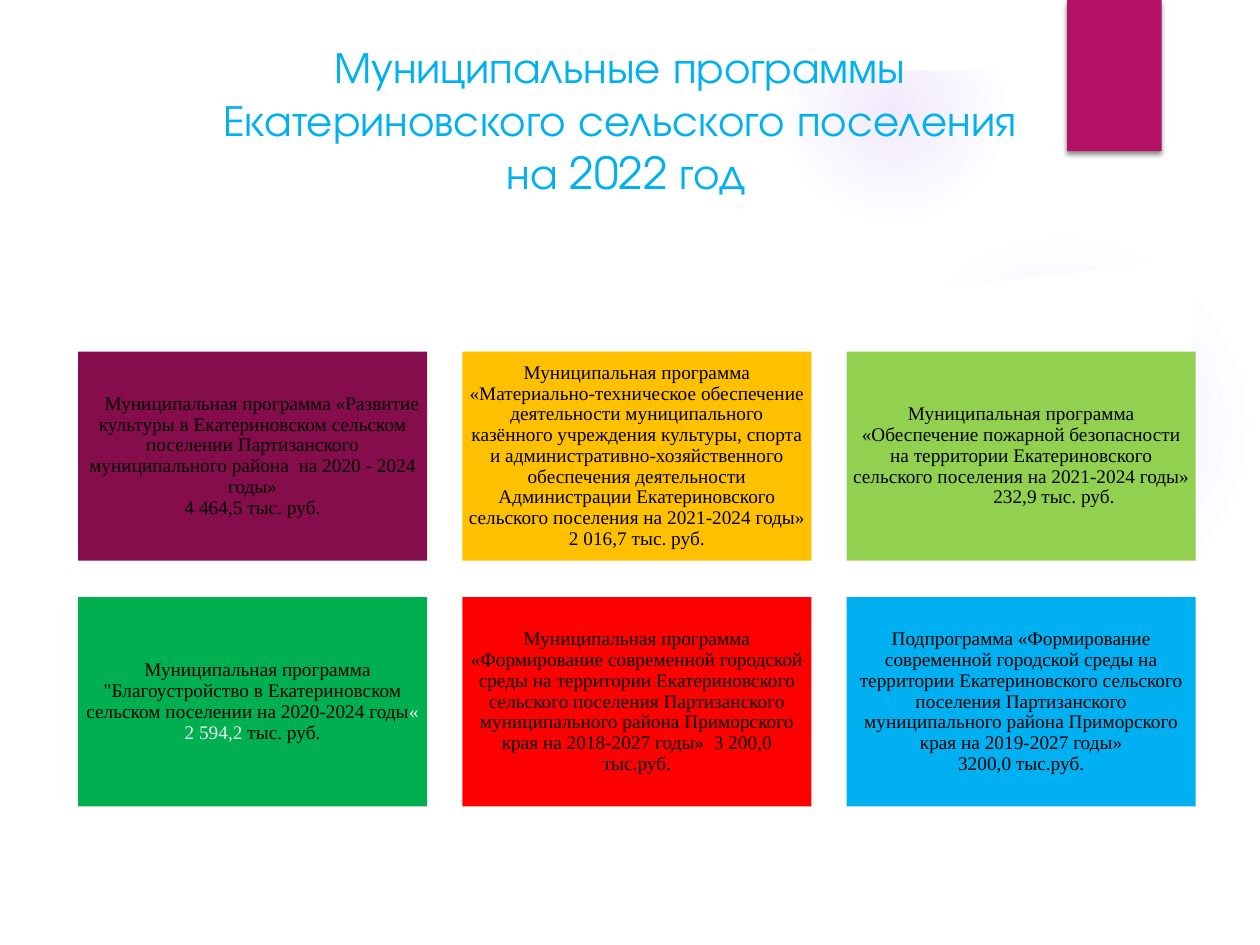
from lxml import etree
from pptx import Presentation
from pptx.dml.color import RGBColor
from pptx.enum import shapes as sh, text as tx
from pptx.oxml import ns
from pptx.util import Inches, Pt

# Content
TITLE = ("Муниципальные программы \vЕкатериновского сельского поселения \v"
         "на 2022 год")
DARK, PALE = "000000", "EBEBEB"
# Each card: fill, first-line indent, sum indent, paragraphs of (text, colour) runs
CARDS = [
    ("860D4C", 0.15, 0, [
        [("Муниципальная программа «Развитие культуры в Екатериновском сельском "
          "поселении Партизанского муниципального района  на 2020 - 2024 годы»", DARK)],
        [("4 464,5 тыс. руб.", DARK)]]),
    ("FFC000", 0, 0, [
        [("Муниципальная программа «Материально-техническое обеспечение деятельности "
          "муниципального казённого учреждения культуры, спорта и "
          "административно-хозяйственного обеспечения деятельности Администрации "
          "Екатериновского сельского поселения на 2021-2024 годы»", DARK)],
        [("2 016,7 тыс. руб.", DARK)]]),
    ("92D050", 0, 0.52, [
        [("Муниципальная программа «Обеспечение пожарной безопасности на территории "
          "Екатериновского сельского поселения на 2021-2024 годы»", DARK)],
        [("232,9 тыс. руб.", DARK)]]),
    ("00B050", 0.08, 0, [
        [("Муниципальная программа \"Благоустройство в Екатериновском сельском "
          "поселении на 2020-2024 годы", DARK), ("«", PALE)],
        [("2 594,2", PALE), (" тыс. руб.", DARK)]]),
    ("FF0000", 0, 0, [
        [("Муниципальная программа «Формирование современной городской среды на "
          "территории Екатериновского сельского поселения Партизанского муниципального "
          "района Приморского края на 2018-2027 годы»  3 200,0 тыс.руб.", DARK)]]),
    ("00B0F0", 0, 0, [
        [("Подпрограмма «Формирование современной городской среды на территории "
          "Екатериновского сельского поселения Партизанского муниципального района "
          "Приморского края на 2019-2027 годы»", DARK)],
        [("3200,0 тыс.руб.", DARK)]]),
]
# Glows: left, top, size, stops of (position %, opacity %)
GLOWS = [(6.89, 1.83, 3.08, [(0, 7), (36, 6), (69, 0)]),
         (6.22, 0, 1.75, [(0, 14), (36, 7), (73, 0)])]
# Wavy top edge of the white panel, in hundredths of an inch
EDGE = [(947, 203), (866, 215), (785, 224), (704, 229), (625, 233), (548, 234),
        (439, 234), (338, 230), (277, 226), (222, 222), (132, 213), (53, 203)]

deck = Presentation()
deck.slide_width, deck.slide_height = Inches(10), Inches(7.5)
slide = deck.slides.add_slide(deck.slide_layouts[5])


def hue(code):
    return RGBColor.from_string(code)


def paint(shape, fill):
    shape.shadow.inherit = False
    shape.line.fill.background()
    shape.fill.solid()
    shape.fill.fore_color.rgb = hue(fill)
    return shape


def block(kind, left, top, width, height, fill):
    box = slide.shapes.add_shape(kind, Inches(left), Inches(top),
                                 Inches(width), Inches(height))
    return paint(box, fill)


def glow(left, top, size, stops):
    disc = block(sh.MSO_SHAPE.OVAL, left, top, size, size, "9B6BF2")
    marks = "".join(
        f'<a:gs pos="{pos * 1000}"><a:srgbClr val="9B6BF2">'
        f'<a:alpha val="{alpha * 1000}"/></a:srgbClr></a:gs>' for pos, alpha in stops)
    grad = etree.fromstring(
        f'<a:gradFill {ns.nsdecls("a")}><a:gsLst>{marks}</a:gsLst><a:path path="circle">'
        '<a:fillToRect l="50000" t="50000" r="50000" b="50000"/></a:path></a:gradFill>')
    old = disc.element.spPr.find(ns.qn("a:solidFill"))
    old.getparent().replace(old, grad)


# Backdrop: glows cut off by the white panel and top strip
for spot in GLOWS:
    glow(*spot)
pen = slide.shapes.build_freeform(53, 203, scale=Inches(0.01))
pen.add_line_segments([(53, 699), (947, 699)] + EDGE, close=True)
paint(pen.convert_to_shape(), "FFFFFF")
block(sh.MSO_SHAPE.RECTANGLE, 0, 0, 10, 0.56, "FFFFFF")

# Ribbon with a soft shadow
ribbon = block(sh.MSO_SHAPE.RECTANGLE, 8.47, 0, 0.75, 1.2, "B31166")
ribbon.element.spPr.find(ns.qn("a:effectLst")).append(etree.fromstring(
    f'<a:outerShdw {ns.nsdecls("a")} blurRad="38100" dist="25400" dir="5400000" '
    'rotWithShape="0"><a:srgbClr val="000000"><a:alpha val="45000"/></a:srgbClr>'
    '</a:outerShdw>'))

# Title, above the backdrop
title = slide.shapes.title
title.element.getparent().append(title.element)
title.left, title.top, title.width, title.height = map(Inches, (0.47, 0.31, 9, 1.51))
frame = title.text_frame
frame.text = TITLE
frame.auto_size = tx.MSO_AUTO_SIZE.NONE
frame.vertical_anchor = tx.MSO_ANCHOR.TOP
frame.margin_top = 0
frame.paragraphs[0].alignment = tx.PP_ALIGN.CENTER
for run in frame.paragraphs[0].runs:
    run.font.name, run.font.size = "TeX Gyre Adventor", Pt(25.2)
    run.font.color.rgb = hue("00B0F0")

# Cards in a grid of three columns
for i, (fill, first, shift, paras) in enumerate(CARDS):
    row, col = divmod(i, 3)
    card = block(sh.MSO_SHAPE.RECTANGLE, 0.62 + 3.05 * col, 2.79 + 1.95 * row,
                 2.77, 1.66, fill)
    frame = card.text_frame
    frame.word_wrap = True
    frame.vertical_anchor = tx.MSO_ANCHOR.MIDDLE
    frame.margin_left = frame.margin_right = Inches(0.05)
    frame.margin_top = frame.margin_bottom = Inches(0.05)
    for n, runs in enumerate(paras):
        para = frame.add_paragraph() if n else frame.paragraphs[0]
        para.alignment = tx.PP_ALIGN.CENTER
        para.line_spacing = 0.9
        props = para._p.get_or_add_pPr()
        props.set("marL", str(Inches(shift if n else 0)))
        props.set("indent", str(Inches(0 if n else first)))
        for words, tone in runs:
            run = para.add_run()
            run.text = words
            run.font.name, run.font.size = "Times New Roman", Pt(11)
            run.font.color.rgb = hue(tone)

deck.save("out.pptx")
